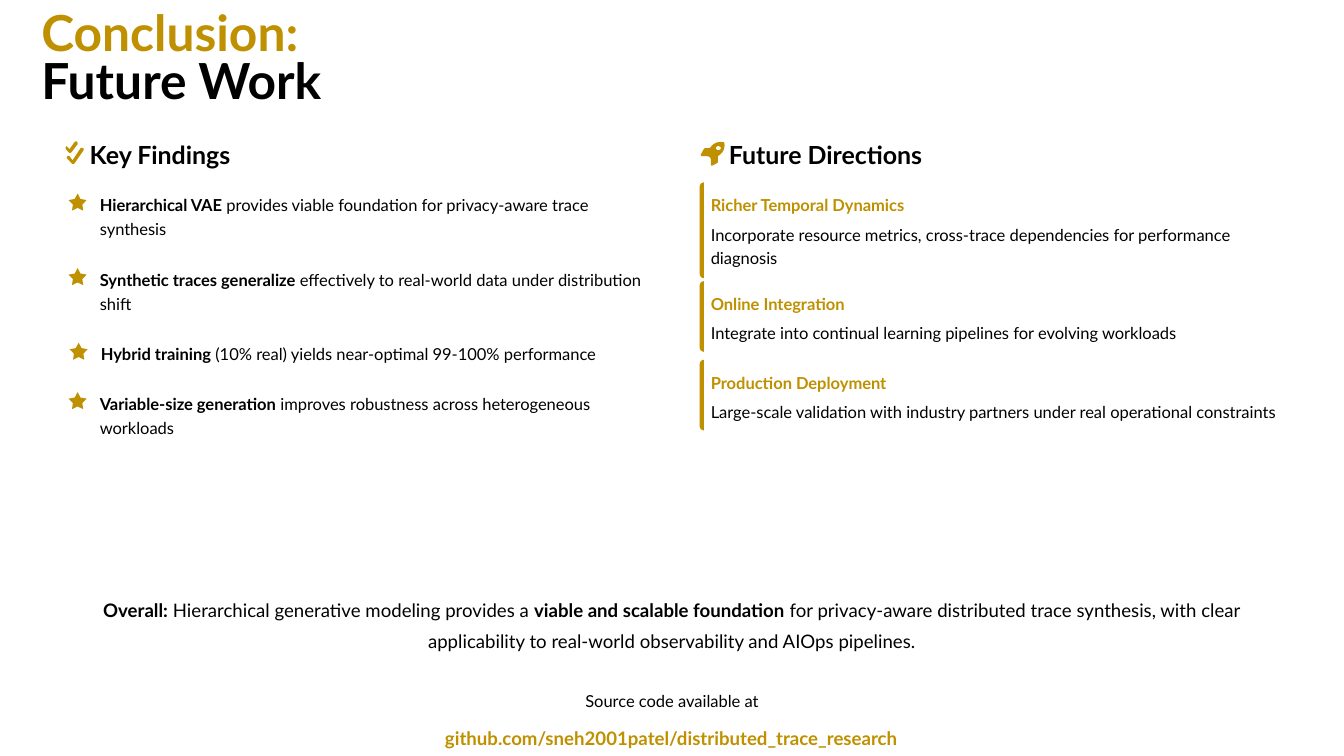
from dataclasses import dataclass

from pptx import Presentation
from pptx.dml.color import RGBColor
from pptx.enum.shapes import MSO_SHAPE
from pptx.enum.text import MSO_ANCHOR, MSO_AUTO_SIZE, PP_ALIGN
from pptx.shapes.autoshape import Shape
from pptx.slide import Slide
from pptx.util import Inches, Pt

STAR = MSO_SHAPE.STAR_5_POINT
MIDDLE = MSO_ANCHOR.MIDDLE
FIXED = MSO_AUTO_SIZE.NONE
LEFT, CENTER = PP_ALIGN.LEFT, PP_ALIGN.CENTER

GOLD, BLACK = "BF9000", "000000"
FONT = "Lato"
BODY, LEAD, HEAD, TITLE = 11.8, 13.3, 17.8, 35.5

Path = list[tuple[float, ...]]


@dataclass
class Finding:
    text: str
    top: float
    left: float = 0.99
    width: float = 5.42
    height: float = 0.49


@dataclass
class Goal:
    name: str
    text: str
    top: float
    bar: float = 0.7
    height: float = 0.25


@dataclass
class Header:
    text: str
    left: float
    icon: list[Path]
    icon_left: float


@dataclass
class Note:
    text: str
    left: float
    top: float
    width: float
    height: float
    size: float
    spacing: float
    color: str = BLACK


CHECKS: list[Path] = [
    [(12, 3), (12, 2, 12, 1, 11, 0.5), (11, 0, 10, 0, 9, 1), (4, 8), (2, 6),
     (2, 5, 1, 5, 0.5, 5.5), (0, 6, 0, 7, 0.5, 8), (3, 11), (4, 12, 5, 12, 6, 11)],
    [(18, 9), (18, 8, 18, 7, 17.5, 7), (17, 6.5, 16, 6.5, 15, 7), (7, 19), (4, 15),
     (3.5, 14.5, 2.5, 14.5, 2, 15), (1, 16, 1, 17, 2, 17.5), (6, 22),
     (7, 23, 8, 23, 9, 22)],
]
ROCKET: list[Path] = [
    [(6, 15), (1, 15), (0, 15, 0, 14, 0.3, 13), (3, 8), (3.5, 7.5, 4, 7, 5, 7),
     (9, 7), (13, 1, 18, 0.5, 22, 1), (23, 1, 23.5, 1.5, 23.5, 2),
     (24, 6, 23.5, 11, 17, 15), (17, 20), (17, 21, 17, 21.5, 16, 22), (12, 24),
     (11, 25, 10, 24, 10, 23), (10, 18), (10, 16, 8, 15, 6, 15)],
    [(20, 7), (20, 6, 19, 5, 17.5, 5), (16, 5, 15, 6, 15, 7),
     (15, 8, 16, 9, 17.5, 9), (19, 9, 20, 8, 20, 7)],
]
HEADERS = [
    Header("Key Findings", 0.89, CHECKS, 0.65),
    Header("Future Directions", 7.23, ROCKET, 6.95),
]
FINDINGS = [
    Finding("**Hierarchical VAE** provides viable foundation for privacy-aware trace synthesis", 1.89),
    Finding("**Synthetic traces generalize** effectively to real-world data under distribution shift", 2.63),
    Finding("**Hybrid training** (10% real) yields near-optimal 99-100% performance",
            3.37, 1.0, 4.96, 0.25),
    Finding("**Variable-size generation** improves robustness across heterogeneous workloads", 3.86),
]
GOALS = [
    Goal("Richer Temporal Dynamics",
         "Incorporate resource metrics, cross-trace dependencies for performance diagnosis",
         1.81, 0.95, 0.49),
    Goal("Online Integration",
         "Integrate into continual learning pipelines for evolving workloads", 2.79),
    Goal("Production Deployment",
         "Large-scale validation with industry partners under real operational constraints", 3.57),
]
NOTES = [
    Note("**Overall:** Hierarchical generative modeling provides a **viable and scalable "
         "foundation** for privacy-aware distributed trace synthesis, with clear "
         "applicability to real-world observability and AIOps pipelines.",
         0.55, 5.86, 12.23, 0.61, LEAD, 1.4),
    Note("Source code available at", 0.37, 6.81, 12.59, 0.25, BODY, 1.2),
    Note("**github.com/sneh2001patel/distributed_trace_research**",
         0.36, 7.14, 12.6, 0.29, LEAD, 1.3, GOLD),
]


def rgb(color: str) -> RGBColor:
    return RGBColor.from_string(color)


def set_up(shape: Shape, left: float, top: float, width: float, height: float) -> None:
    shape.left, shape.top = Inches(left), Inches(top)
    shape.width, shape.height = Inches(width), Inches(height)
    frame = shape.text_frame
    frame.word_wrap = True
    frame.auto_size = FIXED
    frame.vertical_anchor = MIDDLE
    frame.margin_left = frame.margin_right = frame.margin_top = frame.margin_bottom = 0


def style(run, size: float, color: str, bold: bool) -> None:
    run.font.name = FONT
    run.font.size = Pt(size)
    run.font.bold = bold
    run.font.color.rgb = rgb(color)


def add_text(slide: Slide, text: str, left: float, top: float, width: float, height: float,
             size: float = BODY, spacing: float = 1.2, color: str = BLACK,
             align: PP_ALIGN = LEFT) -> None:
    box = slide.shapes.add_textbox(0, 0, 0, 0)
    set_up(box, left, top, width, height)
    para = box.text_frame.paragraphs[0]
    para.alignment = align
    para.line_spacing = spacing
    for i, part in enumerate(text.split("**")):
        if part:
            run = para.add_run()
            run.text = part
            style(run, size, color, i % 2 == 1)


def paint(shape: Shape) -> None:
    shape.shadow.inherit = False
    shape.fill.solid()
    shape.fill.fore_color.rgb = rgb(GOLD)
    shape.line.fill.background()


def flatten(path: Path, steps: int = 6) -> Path:
    points = [path[0]]
    for item in path[1:]:
        if len(item) == 2:
            points.append(item)
            continue
        curve = (*points[-1], *item)
        for i in range(1, steps + 1):
            t = i / steps
            mix = ((1 - t) ** 3, 3 * t * (1 - t) ** 2, 3 * t * t * (1 - t), t ** 3)
            points.append(tuple(sum(m * c for m, c in zip(mix, curve[axis::2]))
                                for axis in (0, 1)))
    return points


def add_outline(slide: Slide, paths: list[Path], left: float, top: float) -> None:
    pen = None
    for path in paths:
        first, *rest = [(Inches(left + x / 100), Inches(top + y / 100))
                        for x, y in flatten(path)]
        if pen is None:
            pen = slide.shapes.build_freeform(*first, scale=1.0)
        else:
            pen.move_to(*first)
        pen.add_line_segments(rest, close=True)
    paint(pen.convert_to_shape())


def add_title(slide: Slide) -> None:
    title = slide.shapes.title
    set_up(title, 0.41, 0.36, 12.76, 0.49)
    title.text_frame.text = "Conclusion:\nFuture Work"
    for para, color in zip(title.text_frame.paragraphs, (GOLD, BLACK)):
        para.alignment = LEFT
        para.line_spacing = 0.8
        para.space_before = Pt(0)
        style(para.runs[0], TITLE, color, True)


def add_finding(slide: Slide, item: Finding) -> None:
    star = slide.shapes.add_shape(STAR, Inches(item.left - 0.31), Inches(item.top + 0.03),
                                  Inches(0.18), Inches(0.17))
    star.adjustments[0] = 0.26
    paint(star)
    add_text(slide, item.text, item.left, item.top, item.width, item.height)


def add_goal(slide: Slide, goal: Goal) -> None:
    end = goal.bar * 100
    bar = [(4, 0), (4, end), (2, end, 0, end - 2, 0, end - 4), (0, 4), (0, 2, 2, 0, 4, 0)]
    add_outline(slide, [bar], 6.94, goal.top)
    add_text(slide, f"**{goal.name}**", 7.05, goal.top + 0.08, 5.7, 0.25, color=GOLD)
    add_text(slide, goal.text, 7.05, goal.top + 0.37, 5.7, goal.height)


def main() -> None:
    deck = Presentation()
    deck.slide_width, deck.slide_height = Inches(13.33), Inches(7.5)
    slide = deck.slides.add_slide(deck.slide_layouts[5])
    add_title(slide)
    for head in HEADERS:
        add_outline(slide, head.icon, head.icon_left, 1.4)
        add_text(slide, f"**{head.text}**", head.left, 1.35, 5.64, 0.33, HEAD, 1.1)
    for item in FINDINGS:
        add_finding(slide, item)
    for goal in GOALS:
        add_goal(slide, goal)
    for note in NOTES:
        add_text(slide, note.text, note.left, note.top, note.width, note.height,
                 note.size, note.spacing, note.color, CENTER)
    deck.save("out.pptx")


if __name__ == "__main__":
    main()
